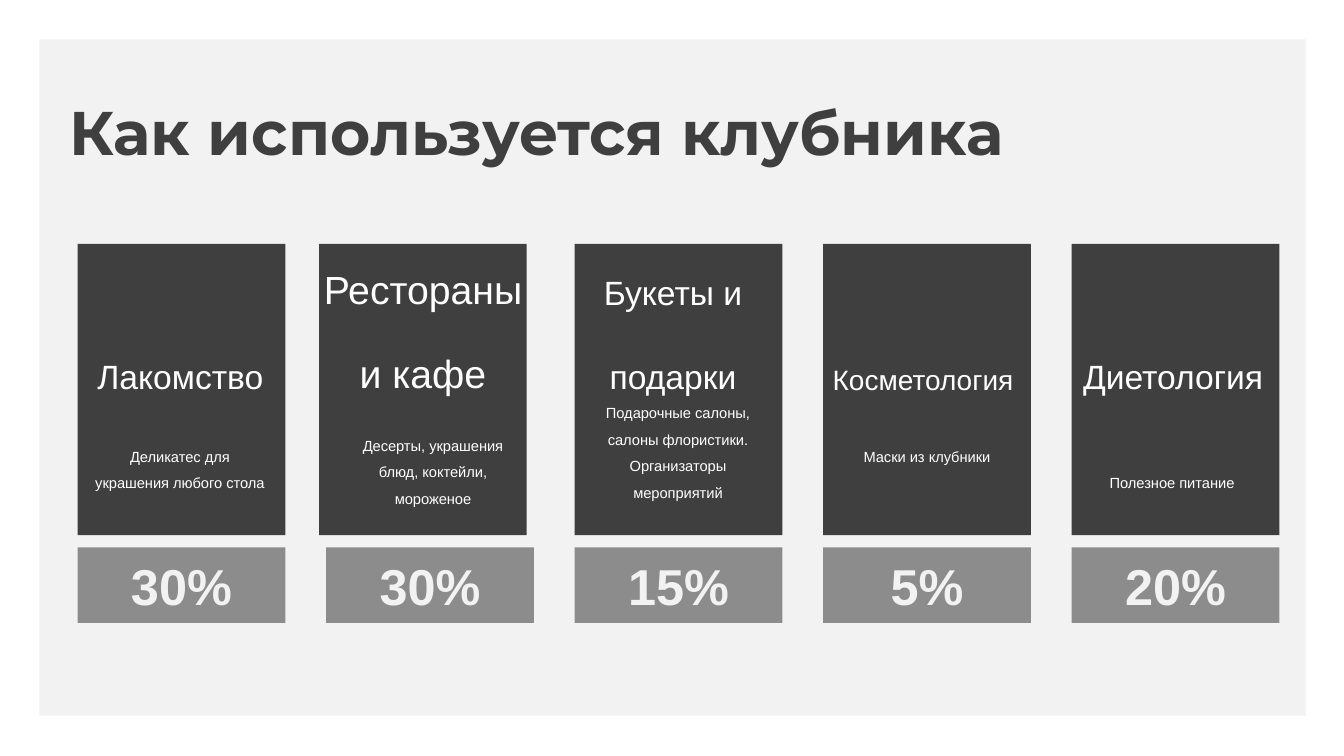
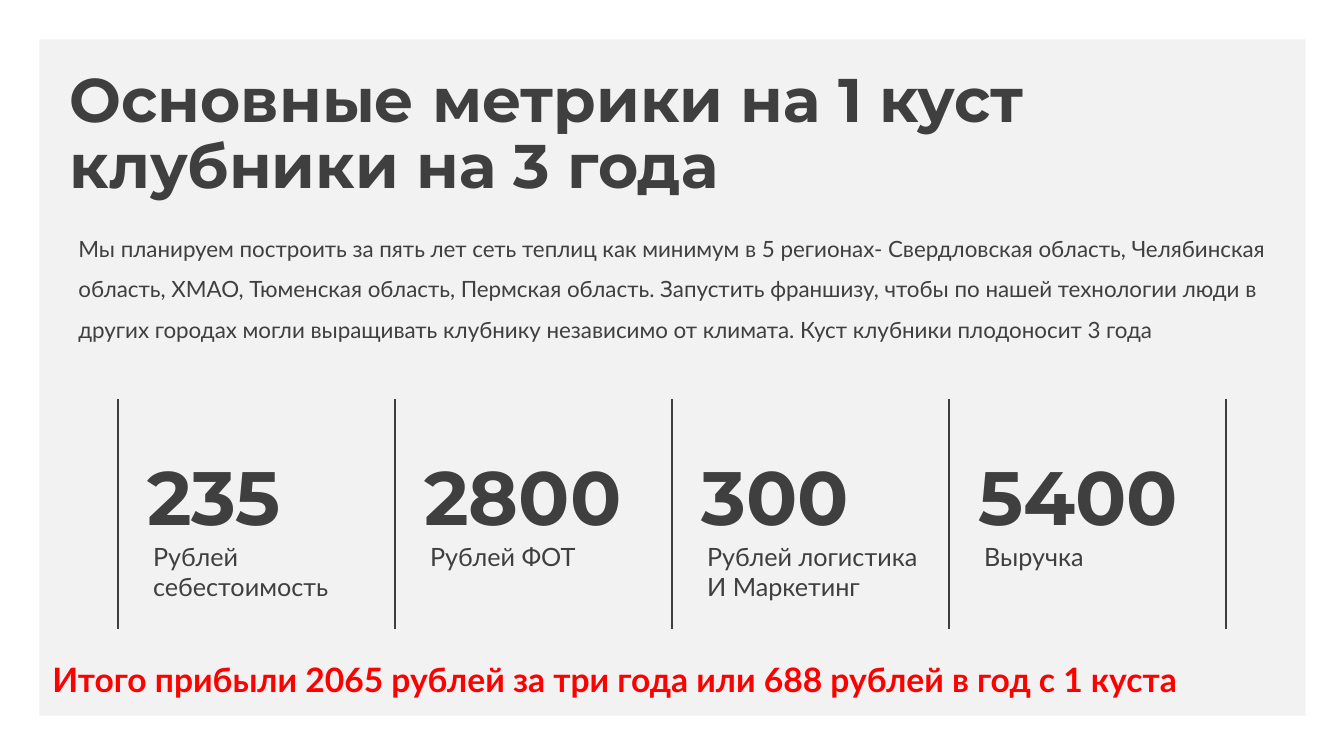
from dataclasses import dataclass

from lxml.etree import SubElement
from pptx import Presentation
from pptx.dml.color import RGBColor
from pptx.enum.shapes import MSO_CONNECTOR, MSO_SHAPE
from pptx.enum.text import MSO_ANCHOR, MSO_AUTO_SIZE, PP_ALIGN
from pptx.oxml.ns import qn
from pptx.util import Inches, Length, Pt

# Shared palette and fonts
WHITE = RGBColor(0xFF, 0xFF, 0xFF)
PANEL = RGBColor(0xF2, 0xF2, 0xF2)
DARK = RGBColor(0x3F, 0x3F, 0x3F)
GREY = RGBColor(0x8C, 0x8C, 0x8C)
RED = RGBColor(0xFF, 0x00, 0x00)
HEAD_FONT, BODY_FONT, CARD_FONT = "Montserrat", "Lato", "Arial"

# Usage cards
CARD_LEFT, CARD_STEP, CARD_WIDTH = 0.77, 2.465, 2.06
CARD_TOP, CARD_HEIGHT = 2.42, 2.89
SHARE_TOP, SHARE_HEIGHT = 5.43, 0.75
NAME_BOTTOM, NAME_HEIGHT = 3.98, 1.78
NOTE_WIDTH, NOTE_HEIGHT = 1.79, 1.16

# Metric columns
RULE_LEFT, RULE_RIGHT, RULE_TOP, RULE_BOTTOM = 1.17, 12.16, 3.96, 6.24
METRIC_INDENT = 0.25


@dataclass(frozen=True)
class Style:
    font: str
    size: float
    color: RGBColor
    bold: bool = False
    spacing: float | Length = 1.0
    align: PP_ALIGN = PP_ALIGN.LEFT
    anchor: MSO_ANCHOR = MSO_ANCHOR.TOP
    inset_x: float = 0.1
    inset_y: float = 0.05


@dataclass(frozen=True)
class Usage:
    name: str
    name_size: int
    name_left: float
    name_width: float
    note: str
    note_left: float
    note_bottom: float
    share: str
    card_shift: float = 0.0


@dataclass(frozen=True)
class Metric:
    value: str
    label: str


TITLE = Style(HEAD_FONT, 44, DARK, True, 0.9, anchor=MSO_ANCHOR.MIDDLE)
NOTE = Style(CARD_FONT, 10.5, WHITE, False, 1.5, PP_ALIGN.CENTER,
             MSO_ANCHOR.BOTTOM, 0.03)
SHARE = Style(CARD_FONT, 36, PANEL, True, 1.0, PP_ALIGN.CENTER,
              MSO_ANCHOR.MIDDLE, 0.07, 0.07)
INTRO = Style(BODY_FONT, 16, DARK, spacing=1.5)
VALUE = Style(HEAD_FONT, 54, DARK, True, 0.9, anchor=MSO_ANCHOR.MIDDLE,
              inset_x=0.04, inset_y=0.04)
LABEL = Style(BODY_FONT, 18, DARK)
TOTAL = Style(BODY_FONT, 24, RED, True)

USAGES = [
    Usage("Лакомство", 24, 0.76, 2.06,
          "Деликатес для украшения любого стола", 0.89, 4.93, "30%"),
    Usage("Рестораны\nи кафе", 28, 3.09, 2.21,
          "Десерты, украшения блюд, коктейли, мороженое", 3.4, 5.08, "30%", -0.07),
    Usage("Букеты и подарки", 24, 5.57, 2.21,
          "Подарочные салоны, салоны флористики. Организаторы мероприятий",
          5.83, 5.02, "15%"),
    Usage("Косметология", 20, 8.05, 2.21, "Маски из клубники", 8.3, 4.67, "5%"),
    Usage("Диетология", 24, 10.53, 2.21, "Полезное питание", 10.73, 4.93, "20%"),
]
METRICS = [
    Metric("235", "Рублей\nсебестоимость"),
    Metric("2800", "Рублей ФОТ"),
    Metric("300", "Рублей логистика\nИ Маркетинг"),
    Metric("5400", "Выручка"),
]


def write(frame, text: str, style: Style) -> None:
    """Fill a text frame, one paragraph per line of text."""
    frame.word_wrap = True
    frame.auto_size = MSO_AUTO_SIZE.NONE
    frame.vertical_anchor = style.anchor
    frame.margin_left = frame.margin_right = Inches(style.inset_x)
    frame.margin_top = frame.margin_bottom = Inches(style.inset_y)
    for index, line in enumerate(text.split("\n")):
        paragraph = frame.add_paragraph() if index else frame.paragraphs[0]
        paragraph.alignment = style.align
        paragraph.line_spacing = style.spacing
        run = paragraph.add_run()
        run.text = line
        run.font.name = style.font
        run.font.size = Pt(style.size)
        run.font.bold = style.bold
        run.font.color.rgb = style.color


def add_text(slide, left: float, top: float, width: float, height: float,
             text: str, style: Style) -> None:
    box = slide.shapes.add_textbox(
        Inches(left), Inches(top), Inches(width), Inches(height))
    write(box.text_frame, text, style)


def add_block(slide, left: float, top: float, width: float, height: float,
              color: RGBColor):
    block = slide.shapes.add_shape(
        MSO_SHAPE.RECTANGLE,
        Inches(left), Inches(top), Inches(width), Inches(height))
    block.shadow.inherit = False
    block.fill.solid()
    block.fill.fore_color.rgb = color
    block.line.fill.background()
    return block


def add_rule(slide, x: float) -> None:
    rule = slide.shapes.add_connector(
        MSO_CONNECTOR.STRAIGHT,
        Inches(x), Inches(RULE_TOP), Inches(x), Inches(RULE_BOTTOM))
    rule.line.color.rgb = DARK
    rule.line.width = Pt(1)
    SubElement(rule.element.spPr, qn("a:effectLst"))


def add_titled_slide(prs, title: str):
    slide = prs.slides.add_slide(prs.slide_layouts.get_by_name("Title Only"))
    write(slide.shapes.title.text_frame, title, TITLE)
    return slide


def prepare_layout(slide) -> None:
    """Give the slide's layout the title position and the pale panel."""
    layout = slide.slide_layout
    title = layout.placeholders[0]
    title.left, title.top = Inches(0.59), Inches(0.62)
    title.width, title.height = Inches(11.5), Inches(1.45)
    panel = add_block(slide, 0.39, 0.39, 12.56, 6.71, PANEL)
    layout.shapes.element.insert(2, panel.element)


def add_usage(slide, index: int, usage: Usage) -> None:
    left = CARD_LEFT + index * CARD_STEP
    add_block(slide, left + usage.card_shift, CARD_TOP, CARD_WIDTH, CARD_HEIGHT, DARK)
    name_style = Style(CARD_FONT, usage.name_size, WHITE, False, Pt(60),
                       PP_ALIGN.CENTER, MSO_ANCHOR.BOTTOM, 0.03)
    add_text(slide, usage.name_left, NAME_BOTTOM - NAME_HEIGHT,
             usage.name_width, NAME_HEIGHT, usage.name, name_style)
    add_text(slide, usage.note_left, usage.note_bottom - NOTE_HEIGHT,
             NOTE_WIDTH, NOTE_HEIGHT, usage.note, NOTE)
    share = add_block(slide, left, SHARE_TOP, CARD_WIDTH, SHARE_HEIGHT, GREY)
    write(share.text_frame, usage.share, SHARE)


def build_usage_slide(prs) -> None:
    slide = add_titled_slide(prs, "Как используется клубника")
    prepare_layout(slide)
    for index, usage in enumerate(USAGES):
        add_usage(slide, index, usage)


def build_metrics_slide(prs) -> None:
    slide = add_titled_slide(prs, "Основные метрики на 1 куст клубники на 3 года")
    add_text(slide, 0.68, 2.15, 12.14, 1.38,
             "Мы планируем построить за пять лет сеть теплиц как минимум в 5 регионах- "
             "Свердловская область, Челябинская область, ХМАО, Тюменская область, "
             "Пермская область. Запустить франшизу, чтобы по нашей технологии люди в "
             "других городах могли выращивать клубнику независимо от климата. "
             "Куст клубники плодоносит 3 года", INTRO)

    # Rules frame each metric on both sides
    step = (RULE_RIGHT - RULE_LEFT) / len(METRICS)
    for index in range(len(METRICS) + 1):
        add_rule(slide, RULE_LEFT + index * step)
    for index, metric in enumerate(METRICS):
        left = RULE_LEFT + index * step + METRIC_INDENT
        add_text(slide, left, 4.59, 2.25, 0.77, metric.value, VALUE)
        add_text(slide, left, 5.32, 2.4, 0.71, metric.label, LABEL)

    add_text(slide, 0.42, 6.49, 11.99, 0.5,
             "Итого прибыли 2065 рублей за три года или 688 рублей в год с 1 куста",
             TOTAL)


def main() -> None:
    prs = Presentation()
    prs.slide_width, prs.slide_height = Inches(13.33), Inches(7.5)
    build_usage_slide(prs)
    build_metrics_slide(prs)
    prs.save("out.pptx")


if __name__ == "__main__":
    main()
